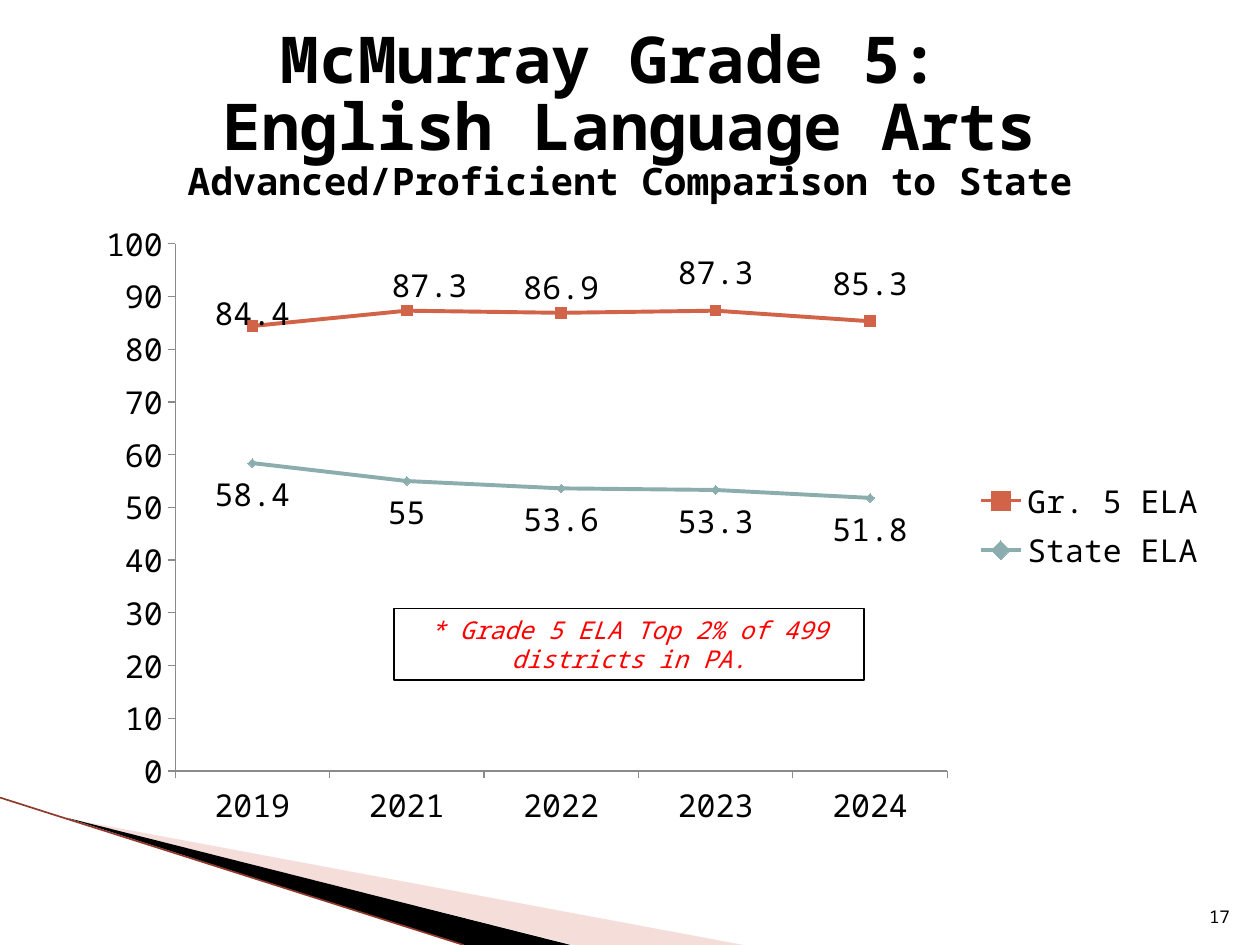
from lxml import etree
from pptx import Presentation
from pptx.chart.data import CategoryChartData
from pptx.dml.color import RGBColor
from pptx.enum.chart import XL_CHART_TYPE, XL_LABEL_POSITION, XL_LEGEND_POSITION, XL_MARKER_STYLE, XL_TICK_MARK
from pptx.enum.shapes import MSO_CONNECTOR, MSO_SHAPE
from pptx.enum.text import MSO_ANCHOR, PP_ALIGN
from pptx.oxml import parse_xml
from pptx.oxml.ns import qn
from pptx.util import Inches, Pt

LINE = XL_CHART_TYPE.LINE_MARKERS
ABOVE, BELOW = XL_LABEL_POSITION.ABOVE, XL_LABEL_POSITION.BELOW
SQUARE, DIAMOND = XL_MARKER_STYLE.SQUARE, XL_MARKER_STYLE.DIAMOND
OUT, NONE = XL_TICK_MARK.OUTSIDE, XL_TICK_MARK.NONE
CENTER, RIGHT = PP_ALIGN.CENTER, PP_ALIGN.RIGHT
NS = "http://schemas.openxmlformats.org/drawingml/2006/chart"


def color(code):
    return RGBColor.from_string(code)


def style(font, size, code="000000"):
    font.name = "Noto Sans Mono"
    font.size = Pt(size)
    font.color.rgb = color(code)


prs = Presentation()
prs.slide_width, prs.slide_height = Inches(10), Inches(7.5)
slide = prs.slides.add_slide(prs.slide_layouts[5])
shapes = slide.shapes

wedges = [
    ([(0.55, 6.5), (5.9, 7.5), (4.55, 7.5)], "E7ACA4", 40),
    ([(0.53, 6.49), (4.53, 7.5), (3.68, 7.5)], "000000", 100),
]
for points, code, alpha in wedges:
    spots = [(Inches(x), Inches(y)) for x, y in points]
    build = shapes.build_freeform(*spots[0])
    build.add_line_segments(spots[1:])
    wedge = build.convert_to_shape()
    wedge.shadow.inherit = False
    wedge.fill.solid()
    wedge.fill.fore_color.rgb = color(code)
    wedge.line.fill.background()
    if alpha < 100:
        tint = wedge.fill._xPr.find(".//" + qn("a:srgbClr"))
        etree.SubElement(tint, qn("a:alpha")).set("val", str(alpha * 1000))

edge = shapes.add_connector(MSO_CONNECTOR.STRAIGHT, 0, Inches(6.33), Inches(3.68), Inches(7.5))
edge.line.color.rgb = color("8F3A2B")
edge.line.width = Pt(0.95)
etree.SubElement(edge._element.spPr, qn("a:effectLst"))

title = shapes.title
title.left, title.top, title.width, title.height = [Inches(n) for n in (0.5, 0.3, 9, 1.25)]
frame = title.text_frame
frame.text = "McMurray Grade 5: \vEnglish Language Arts\vAdvanced/Proficient Comparison to State"
frame.vertical_anchor = MSO_ANCHOR.MIDDLE
para = frame.paragraphs[0]
para.alignment = CENTER
para.line_spacing = 0.87
for run, size in zip(para.runs, (36.9, 36.9, 21.6)):
    style(run.font, size)
    run.font.bold = True

data = CategoryChartData()
data.categories = ["2019", "2021", "2022", "2023", "2024"]
data.add_series("Gr. 5 ELA", [84.4, 87.3, 86.9, 87.3, 85.3])
data.add_series("State ELA", [58.4, 55, 53.6, 53.3, 51.8])
chart = shapes.add_chart(LINE, Inches(0.67), Inches(1.67), Inches(9), Inches(5), data).chart
style(chart.font, 18)
chart.has_title = False
chart.has_legend = True
chart.legend.position = XL_LEGEND_POSITION.RIGHT
chart.legend.include_in_layout = False

scale = chart.value_axis
scale.minimum_scale, scale.maximum_scale, scale.major_unit = 0, 100, 10
scale.has_major_gridlines = False
for axis in (scale, chart.category_axis):
    axis.major_tick_mark, axis.minor_tick_mark = OUT, NONE
    axis.format.line.color.rgb = color("8B8B8B")
    axis.format.line.width = Pt(0.75)

plot = chart.plots[0]
plot.vary_by_categories = False
looks = [("D16349", SQUARE, 6, ABOVE), ("8CADAE", DIAMOND, 5, BELOW)]
for series, (code, mark, size, side) in zip(plot.series, looks):
    series.smooth = False
    series.format.line.color.rgb = color(code)
    series.format.line.width = Pt(2.25)
    series.marker.style, series.marker.size = mark, size
    series.marker.format.fill.solid()
    series.marker.format.fill.fore_color.rgb = color(code)
    series.marker.format.line.color.rgb = color(code)
    labels = series.data_labels
    labels.show_value = True
    labels.position = side
    style(labels.font, 18)

shifts = [(0, 0.03), (0.02, 0.01), (0, 0.01), (0, -0.01), (0, -0.01)]
grade = plot.series[0]
for i, (x, y) in enumerate(shifts):
    label = grade.points[i].data_label
    label.position = ABOVE
    style(label.font, 18)
    node = grade.data_labels._element.findall(qn("c:dLbl"))[i]
    node.insert(1, parse_xml(
        f'<c:layout xmlns:c="{NS}"><c:manualLayout>'
        f'<c:x val="{x}"/><c:y val="{y}"/></c:manualLayout></c:layout>'))

area = chart._chartSpace.find(".//" + qn("c:plotArea"))
for old in area.findall(qn("c:layout")):
    area.remove(old)
area.insert(0, parse_xml(
    f'<c:layout xmlns:c="{NS}"><c:manualLayout><c:layoutTarget val="inner"/>'
    '<c:xMode val="edge"/><c:yMode val="edge"/><c:x val="0.08"/><c:y val="0.053"/>'
    '<c:w val="0.681"/><c:h val="0.837"/></c:manualLayout></c:layout>'))

page = shapes.add_textbox(Inches(9.46), Inches(7.01), Inches(0.4), Inches(0.4))
page.text_frame.text = "17"
page.text_frame.word_wrap = True
page.text_frame.vertical_anchor = MSO_ANCHOR.BOTTOM
para = page.text_frame.paragraphs[0]
para.alignment = RIGHT
style(para.runs[0].font, 10)

note = shapes.add_shape(MSO_SHAPE.RECTANGLE, Inches(3.13), Inches(4.83), Inches(3.73), Inches(0.57))
note.shadow.inherit = False
note.fill.background()
note.line.color.rgb = color("000000")
note.line.width = Pt(1)
note.text_frame.text = "* Grade 5 ELA Top 2% of 499 districts in PA."
note.text_frame.word_wrap = True
para = note.text_frame.paragraphs[0]
para.alignment = CENTER
style(para.runs[0].font, 14, "FF0000")
para.runs[0].font.italic = True

prs.save("out.pptx")
